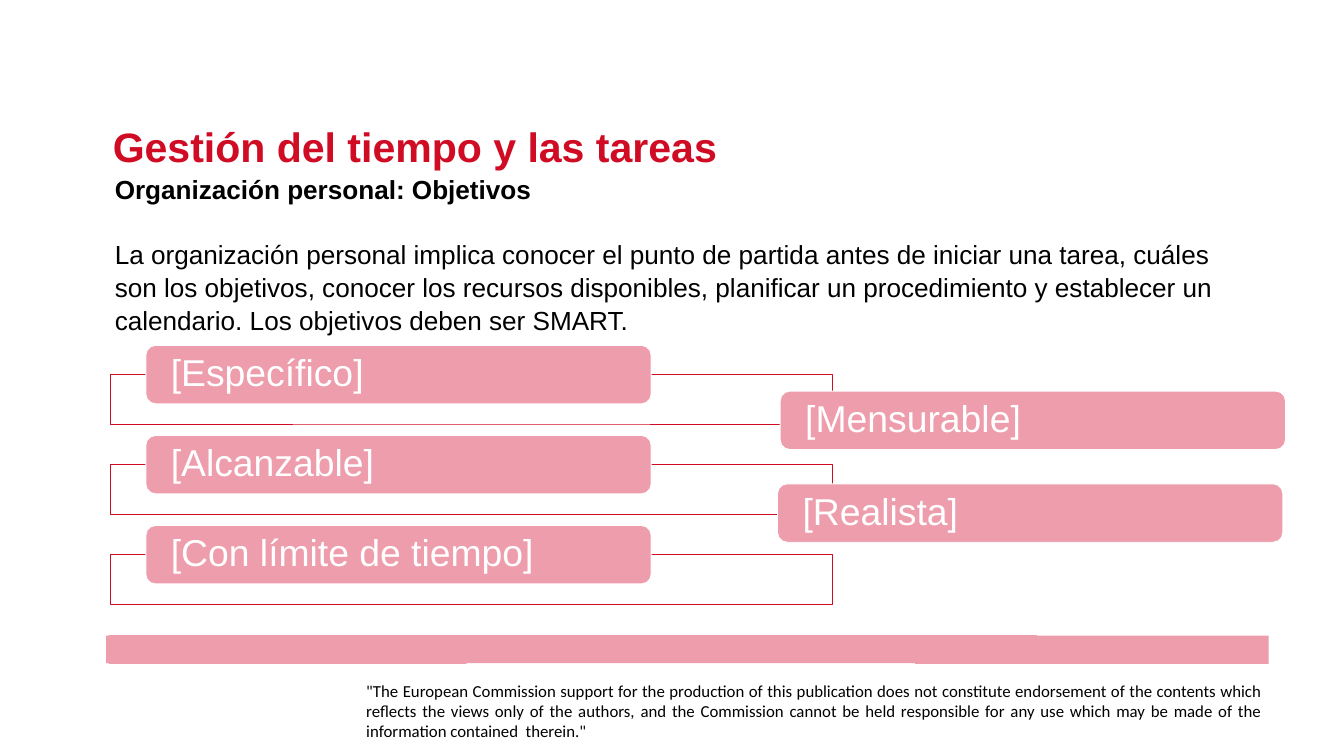
from lxml import etree
from pptx import Presentation
from pptx.dml.color import RGBColor
from pptx.enum.shapes import MSO_SHAPE
from pptx.enum.text import MSO_ANCHOR, PP_ALIGN
from pptx.oxml.ns import qn
from pptx.util import Pt

PX = 9144  # EMU per px, 100 px to the inch
RED = RGBColor(0xD0, 0x0B, 0x24)
PINK = RGBColor(0xED, 0x9D, 0xAB)
WHITE = RGBColor(0xFF, 0xFF, 0xFF)
BLACK = RGBColor(0, 0, 0)
RECT, ROUNDED = MSO_SHAPE.RECTANGLE, MSO_SHAPE.ROUNDED_RECTANGLE
MIDDLE = MSO_ANCHOR.MIDDLE
LEFT, JUSTIFY = PP_ALIGN.LEFT, PP_ALIGN.JUSTIFY

BODY_GAP = Pt(34)
ROW_TOP, ROW_STEP = 514, 134
GOALS_LEFT = ["[Específico]", "[Alcanzable]", "[Con límite de tiempo]"]
GOALS_RIGHT = [("[Mensurable]", 1161, 582), ("[Realista]", 1157, 720)]
BAR_OUTLINE = [
    (158, 946), (162, 946), (162, 945), (1543, 945), (1543, 946), (1888, 946),
    (1888, 988), (1362, 988), (1362, 987), (694, 987), (694, 988), (162, 988),
    (162, 987), (158, 987),
]

TITLE = "Gestión del tiempo y las tareas"
SUBTITLE = "Organización personal: Objetivos"
BODY = (
    "La organización personal implica conocer el punto de partida antes de "
    "iniciar una tarea, cuáles son los objetivos, conocer los recursos "
    "disponibles, planificar un procedimiento y establecer un calendario. "
    "Los objetivos deben ser SMART."
)
DISCLAIMER = (
    '"The European Commission support for the production of this publication '
    "does not constitute endorsement of the contents which reflects the views "
    "only of the authors, and the Commission cannot be held responsible for "
    'any use which may be made of the information contained  therein."'
)


def px(*values):
    return [value * PX for value in values]


def set_frame(tf, insets, **formats):
    tf.word_wrap = True
    sides = ("left", "top", "right", "bottom")
    formats.update(zip([f"margin_{side}" for side in sides], px(*insets)))
    for name, value in formats.items():
        setattr(tf, name, value)


def write(p, text, size, color, font="Arial", bold=False, **formats):
    for name, value in formats.items():
        setattr(p, name, value)
    r = p.add_run()
    r.text = text
    for name, value in {"name": font, "size": Pt(size), "bold": bold}.items():
        setattr(r.font, name, value)
    r.font.color.rgb = color


def add_text(s, box, insets):
    tf = s.shapes.add_textbox(*px(*box)).text_frame
    set_frame(tf, insets)
    return tf


def add_box(s, kind, box, fill, line):
    sp = s.shapes.add_shape(kind, *px(*box))
    sp.shadow.inherit = False
    sp.fill.solid()
    sp.fill.fore_color.rgb = fill
    sp.line.color.rgb = line
    sp.line.width = Pt(1)
    return sp


def add_frame(s, top):
    sp = add_box(s, RECT, (164, top, 1075, 74), WHITE, RED)
    color = sp.fill._xPr.find(qn("a:solidFill"))[0]
    etree.SubElement(color, qn("a:alpha"), val="90000")


def add_goal(s, text, left, top):
    sp = add_box(s, ROUNDED, (left, top, 752, 87), PINK, WHITE)
    sp.adjustments[0] = 0.167
    set_frame(sp.text_frame, (33, 4, 28, 4), vertical_anchor=MIDDLE)
    write(sp.text_frame.paragraphs[0], text, 40, WHITE,
          alignment=LEFT, line_spacing=0.9)


def add_bar(s):
    start, *rest = BAR_OUTLINE
    builder = s.shapes.build_freeform(*start, scale=PX)
    builder.add_line_segments(rest, close=True)
    sp = builder.convert_to_shape()
    sp.shadow.inherit = False
    sp.fill.solid()
    sp.fill.fore_color.rgb = PINK
    sp.line.fill.background()


def main():
    prs = Presentation()
    prs.slide_width, prs.slide_height = px(2000, 1125)
    s = prs.slides.add_slide(prs.slide_layouts[6])

    # Footer bar and disclaimer
    add_bar(s)
    tf = add_text(s, (545, 1015, 1333, 76), (0, 0, 0, 0))
    write(tf.paragraphs[0], DISCLAIMER, 18, BLACK, font="Calibri",
          alignment=JUSTIFY, line_spacing=0.98)

    # Title and introduction
    tf = add_text(s, (158, 172, 964, 83), (10, 5, 10, 5))
    write(tf.paragraphs[0], TITLE, 44, RED, bold=True, line_spacing=1.05)
    tf = add_text(s, (161, 251, 1684, 243), (10, 5, 10, 5))
    write(tf.paragraphs[0], SUBTITLE, 28, BLACK, bold=True, line_spacing=1.05)
    write(tf.add_paragraph(), BODY, 28, BLACK,
          line_spacing=1.05, space_before=BODY_GAP)

    # SMART goals
    for row, text in enumerate(GOALS_LEFT):
        top = ROW_TOP + row * ROW_STEP
        add_frame(s, top + 43)
        add_goal(s, text, 217, top)
    for text, left, top in GOALS_RIGHT:
        add_goal(s, text, left, top)

    prs.save("out.pptx")


if __name__ == "__main__":
    main()
